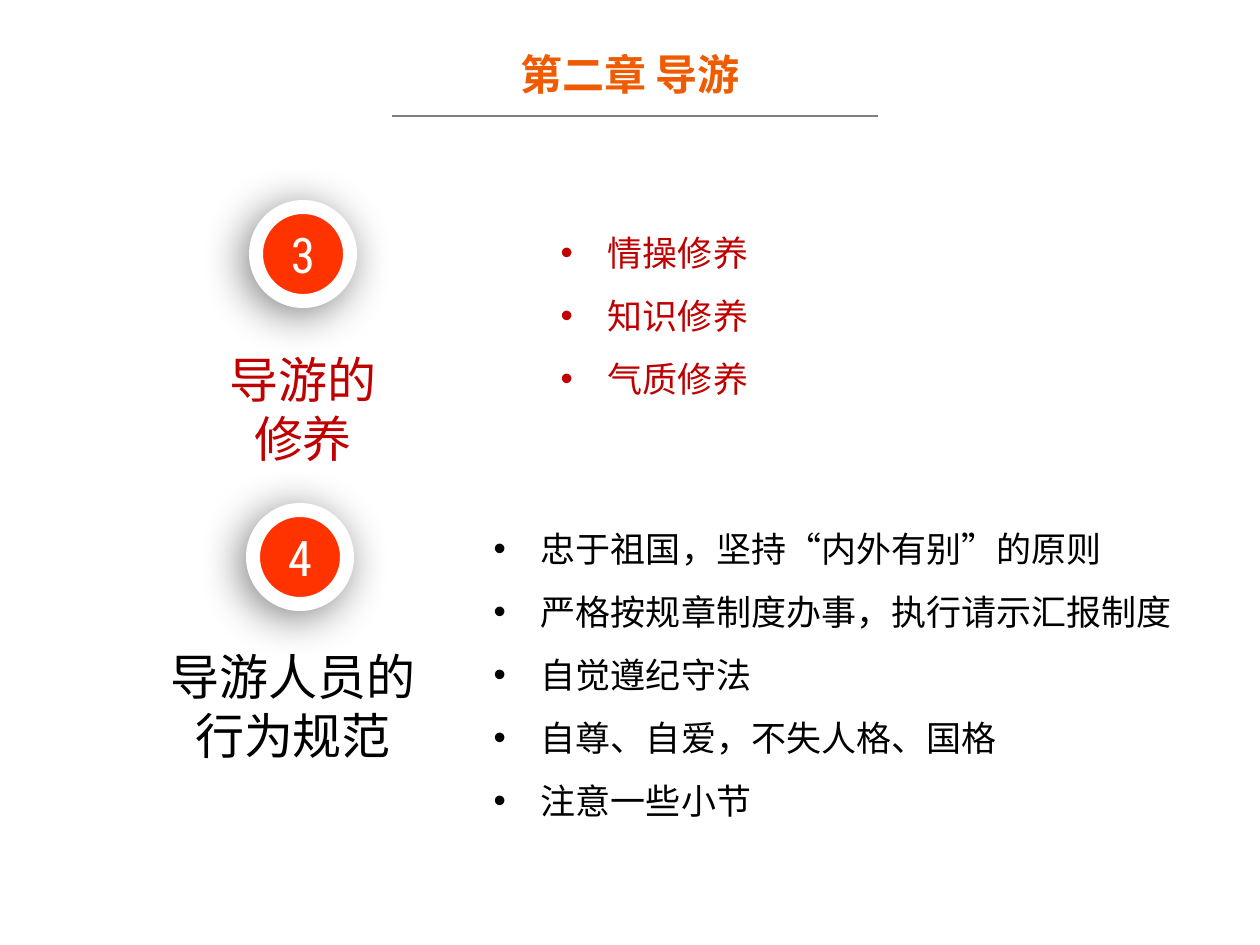
from lxml import etree
from pptx import Presentation
from pptx.dml.color import RGBColor
from pptx.enum.shapes import MSO_CONNECTOR, MSO_SHAPE
from pptx.enum.text import MSO_ANCHOR, MSO_AUTO_SIZE, PP_ALIGN
from pptx.oxml import parse_xml
from pptx.oxml.ns import nsdecls, qn
from pptx.util import Emu, Inches, Pt

STRAIGHT = MSO_CONNECTOR.STRAIGHT
OVAL = MSO_SHAPE.OVAL
TOP, MIDDLE = MSO_ANCHOR.TOP, MSO_ANCHOR.MIDDLE
LEFT, CENTER = PP_ALIGN.LEFT, PP_ALIGN.CENTER
NO_FIT = MSO_AUTO_SIZE.NONE
TWO_CONTENT = 3
PX = Inches(10) / 1260

ORANGE, RED, DARK_RED = "EE5B00", "FF3300", "C00000"
BLACK, WHITE, GRAY = "000000", "FFFFFF", "7F7F7F"

SHADOW = f"""<a:effectLst {nsdecls("a")}>
  <a:outerShdw blurRad="{Pt(25)}" dist="{Pt(5)}" dir="8100000" algn="tr" rotWithShape="0">
    <a:srgbClr val="000000"><a:alpha val="49000"/></a:srgbClr>
  </a:outerShdw>
</a:effectLst>"""


def px(*lengths):
    return [Emu(round(n * PX)) for n in lengths]


def rgb(color):
    return RGBColor.from_string(color)


class ChapterSlide:
    """Holds the current slide and its text style."""

    font = "Calibri"
    number_font = "Roboto Condensed"

    def __init__(self, prs):
        self.slide = prs.slides.add_slide(prs.slide_layouts[TWO_CONTENT])
        self.shapes = self.slide.shapes

    def set_text(self, s, lines, size, color, font=None, bold=False,
                 align=CENTER, spacing=1.0, anchor=TOP, wrap=True):
        tf = s.text_frame
        tf.text = "\n".join(lines)
        tf.word_wrap = wrap
        tf.auto_size = NO_FIT
        tf.vertical_anchor = anchor
        for p in tf.paragraphs:
            p.alignment = align
            p.line_spacing = spacing
            p.space_before = Pt(0)
            p.font.name = font or self.font
            p.font.size = Pt(size)
            p.font.bold = bold
            p.font.color.rgb = rgb(color)

    def place(self, s, box):
        s.left, s.top, s.width, s.height = px(*box)

    def title(self, text, box):
        s = self.shapes.title
        self.place(s, box)
        self.set_text(s, [text], 24, ORANGE, bold=True, wrap=False)

    def rule(self, x1, x2, y):
        s = self.shapes.add_connector(STRAIGHT, *px(x1, y, x2, y))
        s.line.color.rgb = rgb(GRAY)
        s.line.width = Pt(0.75)
        etree.SubElement(s._element.spPr, qn("a:effectLst"))

    def badge(self, number, x, y, size=94):
        s = self.shapes.add_shape(OVAL, *px(x, y, size, size))
        s.fill.solid()
        s.fill.fore_color.rgb = rgb(RED)
        s.line.color.rgb = rgb(WHITE)
        s.line.width = Pt(8)
        s._element.spPr.append(parse_xml(SHADOW))
        self.set_text(s, [number], 28, WHITE, self.number_font, anchor=MIDDLE)

    def label(self, lines, box, color):
        s = self.shapes.add_textbox(*px(*box))
        self.set_text(s, lines, 28, color)

    def bullets(self, idx, lines, box, color):
        """Fill a body placeholder, which supplies bullets and indents."""
        s = self.slide.placeholders[idx]
        self.place(s, box)
        self.set_text(s, lines, 20, color, align=LEFT, spacing=1.5)


def main():
    prs = Presentation()
    prs.slide_width, prs.slide_height = Inches(10), Inches(7.5)

    chapter = ChapterSlide(prs)
    chapter.title("第二章 导游", (506, 42, 248, 63))
    chapter.rule(392, 878, 116)

    chapter.badge("3", 256, 207)
    chapter.label(["导游的", "修养"], (179, 343, 248, 131), DARK_RED)
    chapter.bullets(1, ["情操修养", "知识修养", "气质修养"],
                    (548, 204, 486, 204), DARK_RED)

    chapter.badge("4", 253, 510)
    chapter.label(["导游人员的", "行为规范"], (134, 640, 318, 131), BLACK)
    chapter.bullets(2, [
        "忠于祖国，坚持“内外有别”的原则",
        "严格按规章制度办事，执行请示汇报制度",
        "自觉遵纪守法",
        "自尊、自爱，不失人格、国格",
        "注意一些小节",
    ], (481, 500, 753, 324), BLACK)

    prs.save("out.pptx")


if __name__ == "__main__":
    main()
